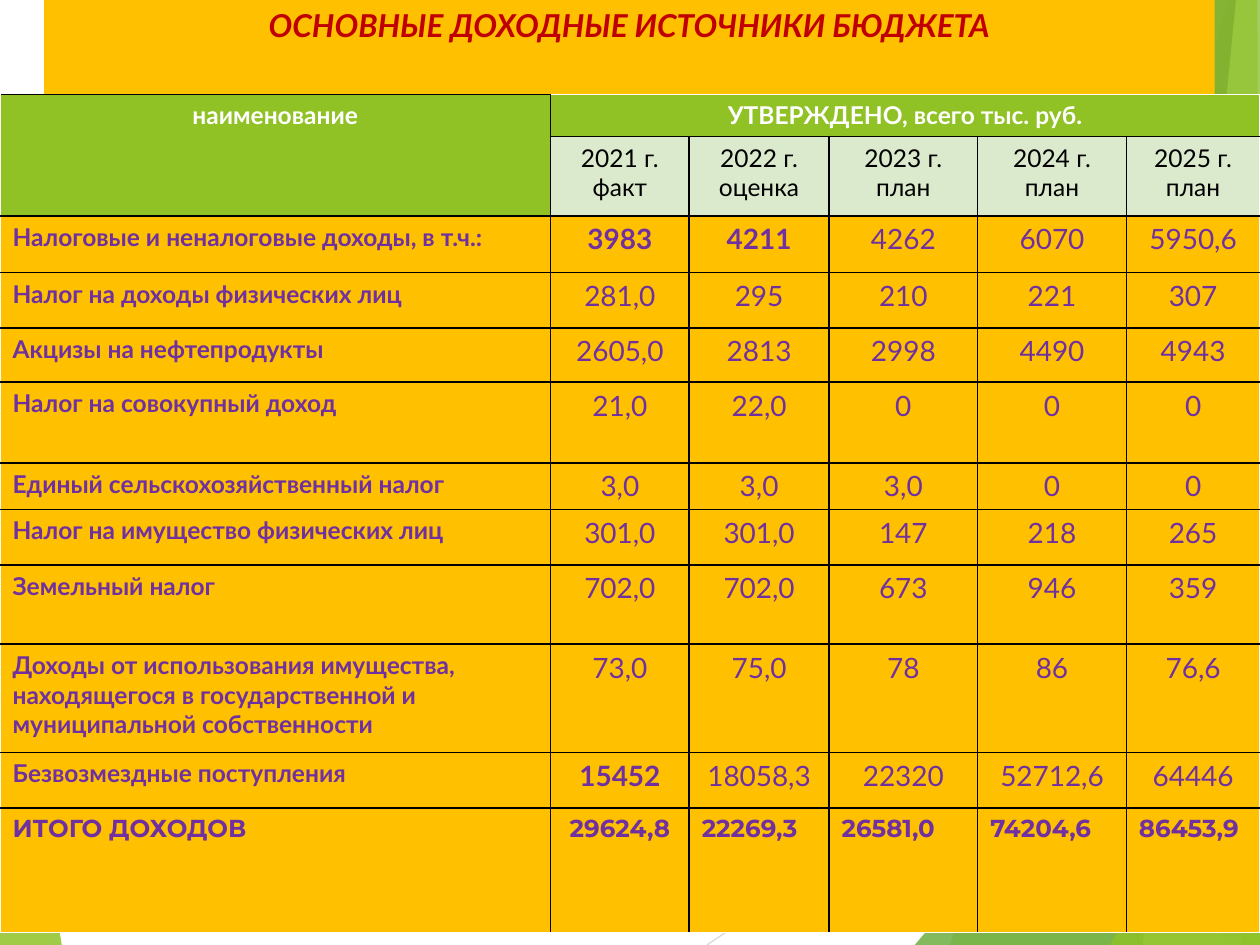
from lxml import etree
from pptx import Presentation
from pptx import util as u
from pptx.dml.color import RGBColor
from pptx.enum import text
from pptx.oxml import ns

WIDTH, HEIGHT = 10, 7.5
GREEN, GOLD, PALE = "90C226", "FFC000", "DBE9CD"
PURPLE, BLACK, WHITE = "7030A0", "000000", "FFFFFF"
HEADING = "ОСНОВНЫЕ ДОХОДНЫЕ ИСТОЧНИКИ БЮДЖЕТА"
INCOME = [
    ["наименование", "УТВЕРЖДЕНО, всего тыс. руб.", "", "", "", ""],
    ["", "2021 г. факт", "2022 г. оценка", "2023 г. план", "2024 г. план", "2025 г. план"],
    ["Налоговые и неналоговые доходы, в т.ч.:", "3983", "4211", "4262", "6070", "5950,6"],
    ["Налог на доходы физических лиц", "281,0", "295", "210", "221", "307"],
    ["Акцизы на нефтепродукты", "2605,0", "2813", "2998", "4490", "4943"],
    ["Налог на совокупный доход", "21,0", "22,0", "0", "0", "0"],
    ["Единый сельскохозяйственный налог", "3,0", "3,0", "3,0", "0", "0"],
    ["Налог на имущество физических лиц", "301,0", "301,0", "147", "218", "265"],
    ["Земельный налог", "702,0", "702,0", "673", "946", "359"],
    ["Доходы от использования имущества, находящегося в государственной и "
     "муниципальной собственности", "73,0", "75,0", "78", "86", "76,6"],
    ["Безвозмездные поступления", "15452", "18058,3", "22320", "52712,6", "64446"],
    ["ИТОГО ДОХОДОВ", "29624,8", "22269,3", "26581,0", "74204,6", "86453,9"],
]
COLUMN_WIDTHS = [4.37, 1.1, 1.11, 1.18, 1.18, 1.06]
ROW_HEIGHTS = [0.33, 0.63, 0.45, 0.44, 0.43, 0.64, 0.37, 0.44, 0.63, 0.86, 0.44, 0.99]
BOLD_VALUES = {"3983", "4211", "15452"}
RAYS = [
    ("D9D9D9", (5.61, 7.5), (10, 4.57)),
    ("BFBFBF", (7.7, 0), (9.04, 7.5)),
]
FACETS = [
    (GREEN, 85, [(0, 4.39), (0.49, 7.5), (0, 7.5)]),
    (GREEN, 30, [(9.75, 0), (7.54, 7.5), (10, 7.5), (10, 0)]),
    (GREEN, 20, [(7.88, 0), (9.19, 7.5), (10, 7.5), (10, 0)]),
    ("54A021", 72, [(7.26, 7.5), (10, 4.29), (10, 7.5)]),
    ("3F7819", 70, [(7.67, 0), (9.7, 7.5), (10, 7.5), (10, 0)]),
    ("C0E474", 70, [(9.81, 0), (9.07, 7.5), (10, 7.5), (10, 0)]),
    (GREEN, 65, [(8.83, 0), (9.86, 7.5), (10, 7.5), (9.98, 0)]),
    (GREEN, 80, [(8.81, 7.5), (10, 5.35), (10, 7.5)]),
]


def paint(fill, color, opacity=100):
    fill.solid()
    fill.fore_color.rgb = RGBColor.from_string(color)
    if opacity < 100:
        tint = fill.fore_color._xFill.find(ns.qn("a:srgbClr"))
        etree.SubElement(tint, ns.qn("a:alpha"), val=str(opacity * 1000))


def write(frame, words, size=14, color=PURPLE, font="Lato", bold=True, italic=False, centred=True):
    paragraph = frame.paragraphs[0]
    paragraph.alignment = text.PP_ALIGN.CENTER if centred else text.PP_ALIGN.LEFT
    run = paragraph.add_run()
    run.text = words
    run.font.size, run.font.name = u.Pt(size), font
    run.font.bold, run.font.italic = bold, italic
    paint(run.font.fill, color)


def draw_ray(slide, color, start, end):
    ray = slide.shapes.add_connector(1, *[u.Inches(v) for v in start + end])
    paint(ray.line.fill, color)
    ray.line.width = u.Pt(0.75)
    etree.SubElement(ray.element.spPr, ns.qn("a:effectLst"))


def draw_facet(slide, color, opacity, corners):
    start, *others = [(u.Inches(x), u.Inches(y)) for x, y in corners]
    outline = slide.shapes.build_freeform(*start)
    outline.add_line_segments(others, close=True)
    facet = outline.convert_to_shape()
    paint(facet.fill, color, opacity)
    facet.line.fill.background()
    facet.shadow.inherit = False


def border(cell, colors):
    for side, color in zip("LRTB", colors):
        edge = etree.SubElement(cell._tc.get_or_add_tcPr(), ns.qn(f"a:ln{side}"), w=str(u.Pt(1)))
        solid = etree.SubElement(edge, ns.qn("a:solidFill"))
        etree.SubElement(solid, ns.qn("a:srgbClr"), val=color)


def cell_format(row, column, words):
    last = len(INCOME) - 1
    if row == 0:
        return GREEN, dict(color=WHITE)
    if row == 1:
        return (PALE if column else GREEN), dict(color=BLACK, bold=False)
    if row == last:
        return GOLD, dict(font="Montserrat", centred=column == 1)
    if column == 0:
        return GOLD, dict(centred=False)
    return GOLD, dict(size=16, bold=words in BOLD_VALUES)


def add_income_table(slide):
    rows, columns = len(INCOME), len(COLUMN_WIDTHS)
    table = slide.shapes.add_table(rows, columns, 0, u.Inches(0.75), u.Inches(WIDTH),
                                   u.Inches(sum(ROW_HEIGHTS))).table
    for column, width in zip(table.columns, COLUMN_WIDTHS):
        column.width = u.Inches(width)
    for row, height in zip(table.rows, ROW_HEIGHTS):
        row.height = u.Inches(height)
    table.cell(0, 0).merge(table.cell(1, 0))
    table.cell(0, 1).merge(table.cell(0, columns - 1))
    for r, entries in enumerate(INCOME):
        for c, words in enumerate(entries):
            cell = table.cell(r, c)
            right = c + (cell.span_width if cell.is_merge_origin else 1)
            outer = [c == 0, right == columns, r == 0 and c > 0, r == rows - 1]
            border(cell, [WHITE if edge else BLACK for edge in outer])
            fill, style = cell_format(r, c, words)
            paint(cell.fill, fill)
            if words:
                write(cell.text_frame, words, **style)


def main():
    deck = Presentation()
    deck.slide_width, deck.slide_height = u.Inches(WIDTH), u.Inches(HEIGHT)
    slide = deck.slides.add_slide(deck.slide_layouts[5])
    draw_facet(slide, *FACETS[0])
    for ray in RAYS:
        draw_ray(slide, *ray)
    for facet in FACETS[1:]:
        draw_facet(slide, *facet)

    heading = slide.shapes.title
    slide.shapes.element.append(heading.element)
    heading.left, heading.top = u.Inches(0.35), 0
    heading.width, heading.height = u.Inches(9.29), u.Inches(0.75)
    paint(heading.fill, GOLD)
    heading.text_frame.vertical_anchor = text.MSO_ANCHOR.TOP
    write(heading.text_frame, HEADING, size=18, color="C00000", italic=True)
    add_income_table(slide)
    deck.save("out.pptx")


if __name__ == "__main__":
    main()
